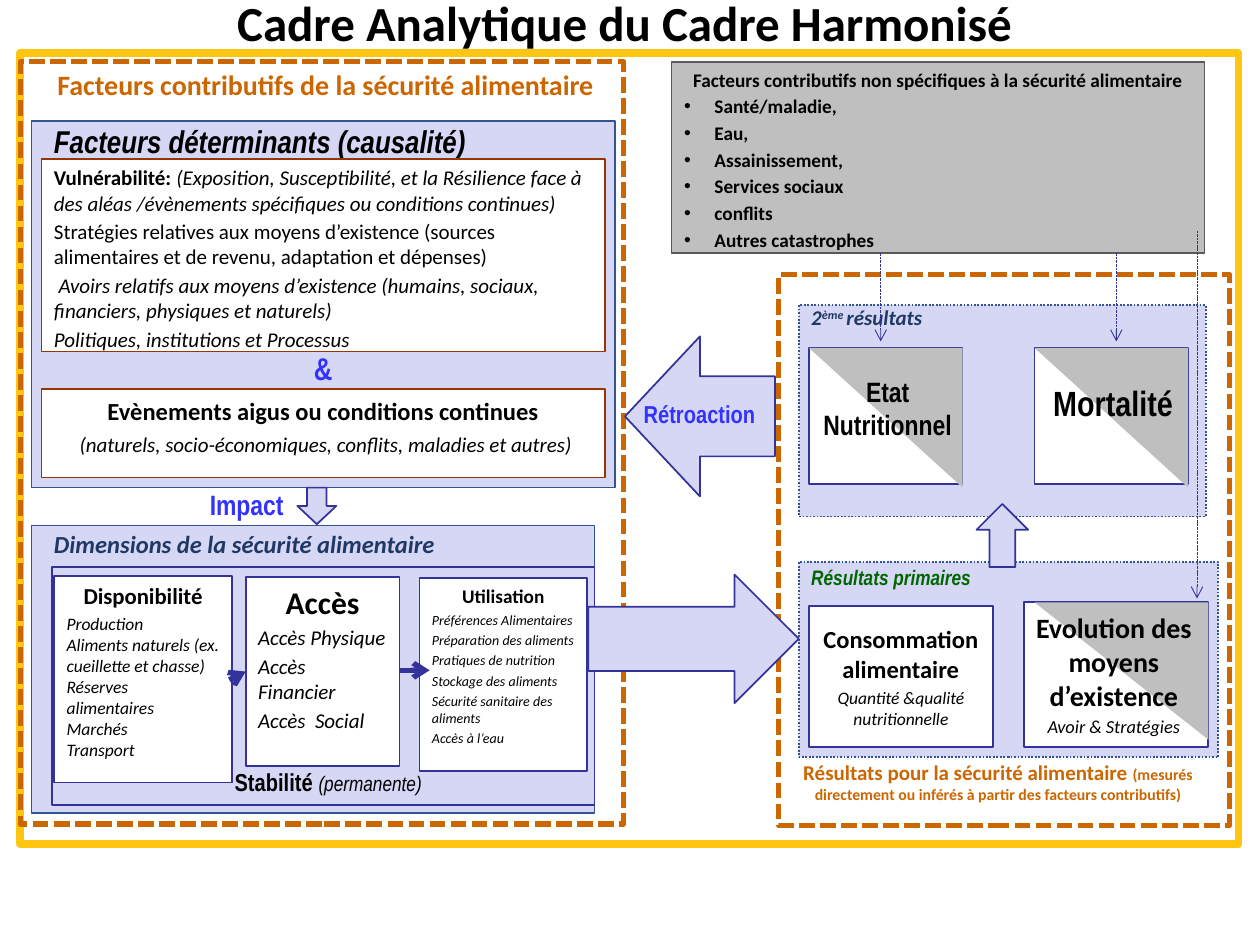
from collections import namedtuple

from lxml.etree import SubElement
from pptx import Presentation
from pptx.dml.color import RGBColor
from pptx.enum.dml import MSO_LINE as Dash
from pptx.enum.shapes import MSO_CONNECTOR as Connector, MSO_SHAPE as Preset
from pptx.enum.text import MSO_ANCHOR as Anchor, MSO_AUTO_SIZE as AutoSize, PP_ALIGN as Align
from pptx.oxml.ns import qn
from pptx.util import Inches, Pt

COLORS = {
    "black": "000000", "white": "FFFFFF", "gold": "FFC611", "orange": "CC6600",
    "lilac": "D6D6F5", "blue": "325491", "indigo": "333399", "bright": "3333FF",
    "navy": "203864", "brown": "993300", "green": "006600",
    "silver": "BFBFBF", "grey": "595959",
}
NARROW = "Arial Narrow"
Run = namedtuple("Run", "text size style", defaults=("",))
Para = namedtuple("Para", "runs align after bullet", defaults=(Align.LEFT, 2, False))


def lines(texts, size, style="", **layout):
    return [Para([Run(text, size, style)], **layout) for text in texts]


def centered(text, size, style="b", **layout):
    return Para([Run(text, size, style)], Align.CENTER, **layout)


class Board:
    def __init__(self, slide, font="Calibri"):
        self.slide = slide
        self.font = font

    def color(self, name):
        return RGBColor.from_string(COLORS[name])

    def place(self, shape, box):
        shape.left, shape.top, shape.width, shape.height = map(Inches, box)

    def paint(self, shape, fill=None, line=None, weight=1, dash=None):
        if fill:
            shape.fill.solid()
            shape.fill.fore_color.rgb = self.color(fill)
        else:
            shape.fill.background()
        if line:
            self.stroke(shape.line, line, weight, dash)
        else:
            shape.line.fill.background()

    def stroke(self, outline, color, weight, dash):
        outline.color.rgb = self.color(color)
        outline.width = Pt(weight)
        if dash:
            outline.dash_style = dash

    def fill_text(self, frame, paras, color="black", font=None, anchor=Anchor.TOP):
        frame.word_wrap = True
        frame.auto_size = AutoSize.NONE
        frame.vertical_anchor = anchor
        for index, para in enumerate(paras):
            target = frame.add_paragraph() if index else frame.paragraphs[0]
            target.alignment = para.align
            target.space_before, target.space_after = Pt(0), Pt(para.after)
            self.bullet(target, para.bullet)
            for part in para.runs:
                run = target.add_run()
                run.text = part.text
                run.font.name = font or self.font
                run.font.size = Pt(part.size)
                run.font.bold = "b" in part.style
                run.font.italic = "i" in part.style
                run.font.color.rgb = self.color(color)
                if "^" in part.style:
                    run.font._element.set("baseline", "30000")

    def bullet(self, paragraph, shown):
        props = paragraph._p.get_or_add_pPr()
        indent = Inches(0.24) if shown else 0
        props.set("marL", str(indent))
        props.set("indent", str(-indent))
        if shown:
            SubElement(props, qn("a:buFont"), typeface="Arial")
            SubElement(props, qn("a:buChar"), char="•")
        else:
            SubElement(props, qn("a:buNone"))

    def title(self, box, paras):
        heading = self.slide.shapes.title
        self.place(heading, box)
        self.fill_text(heading.text_frame, paras)

    def body(self, box, paras, **look):
        content = self.slide.placeholders[1]
        self.place(content, box)
        self.paint(content, **look)
        self.fill_text(content.text_frame, paras)

    def shape(self, preset, box, **look):
        item = self.slide.shapes.add_shape(preset, *map(Inches, box))
        item.shadow.inherit = False
        self.paint(item, **look)
        return item

    def panel(self, box, paras=(), anchor=Anchor.TOP, **look):
        item = self.shape(Preset.RECTANGLE, box, **look)
        self.fill_text(item.text_frame, paras, anchor=anchor)

    def block_arrow(self, preset, box):
        self.shape(preset, box, fill="lilac", line="indigo")

    def split_panel(self, box, corner):
        self.panel(box, fill="white", line="indigo")
        self.shape(Preset.RIGHT_TRIANGLE, corner, fill="silver").rotation = 180

    def label(self, box, paras, color="black", font=None):
        item = self.slide.shapes.add_textbox(*map(Inches, box))
        self.fill_text(item.text_frame, paras, color, font)

    def arrow(self, start, end, weight=0.5, dash=Dash.SQUARE_DOT):
        link = self.slide.shapes.add_connector(
            Connector.STRAIGHT, *map(Inches, start + end))
        self.stroke(link.line, "indigo", weight, dash)
        SubElement(link.line._get_or_add_ln(), qn("a:tailEnd"), type="arrow")
        SubElement(link._element.spPr, qn("a:effectLst"))


def draw_frames(board):
    board.title((0, -0.11, 10, 0.6), [centered("Cadre Analytique du Cadre Harmonisé ", 28, after=0)])
    board.body(
        (5.33, 0.49, 4.23, 1.52),
        [centered("Facteurs contributifs non spécifiques à la sécurité alimentaire", 11)]
        + lines(["Santé/maladie,", "Eau,", "Assainissement,", "Services sociaux",
                 "conflits", "Autres catastrophes"], 11, "b", bullet=True),
        fill="silver", line="grey")
    board.panel((0.16, 0.42, 9.67, 6.28), line="gold", weight=4.5)
    board.panel((0.25, 0.96, 4.63, 2.91), fill="lilac", line="blue")
    board.panel((0.25, 4.17, 4.47, 2.28), fill="lilac", line="blue")
    for box in ((0.16, 0.49, 4.79, 6.05), (6.18, 2.18, 3.58, 4.37)):
        board.panel(box, line="orange", weight=3, dash=Dash.SQUARE_DOT)


def draw_factors(board):
    board.label((0.25, 0.49, 4.67, 0.37),
                [centered("Facteurs contributifs de la sécurité alimentaire", 16)], "orange")
    board.label((0.33, 0.92, 4.04, 0.4),
                lines(["Facteurs déterminants (causalité)"], 18, "bi"), font=NARROW)
    board.panel((0.33, 1.26, 4.47, 1.53), [
        Para([Run("Vulnérabilité: ", 12, "b"),
              Run("(Exposition, Susceptibilité, et la Résilience face à des aléas "
                  "/évènements spécifiques ou conditions continues)", 12, "i")]),
        *lines(["Stratégies relatives aux moyens d’existence (sources alimentaires "
                "et de revenu, adaptation et dépenses)"], 12),
        *lines([" Avoirs relatifs aux moyens d’existence (humains, sociaux, "
                "financiers, physiques et naturels)",
                "Politiques, institutions et Processus"], 12, "i"),
    ], fill="white", line="brown")
    board.panel((0.33, 3.09, 4.47, 0.7), [
        centered("Evènements aigus ou conditions continues", 14),
        Para([Run(" ", 14, "b"),
              Run("(naturels, socio-économiques, conflits, maladies et autres)", 12, "i")],
             Align.CENTER),
    ], fill="white", line="brown")
    board.label((2.08, 2.72, 0.97, 0.42), [centered("&", 18)], "bright", NARROW)
    board.block_arrow(Preset.DOWN_ARROW, (2.36, 3.87, 0.31, 0.29))
    board.label((1.38, 3.82, 0.97, 0.37),
                lines(["Impact"], 16, "b", align=Align.RIGHT), "bright", NARROW)


def draw_dimensions(board):
    board.label((0.33, 4.15, 4.31, 0.34),
                lines(["Dimensions de la sécurité alimentaire"], 14, "bi"), "navy")
    board.panel((0.41, 4.5, 4.31, 1.89), line="indigo")
    dimensions = [
        ((0.43, 4.57, 1.41, 1.64), "Disponibilité", 13, 10, 0,
         ["Production", "Aliments naturels (ex. cueillette et chasse)",
          "Réserves alimentaires", "Marchés", "Transport"]),
        ((1.95, 4.58, 1.22, 1.5), "Accès", 18, 12, 2,
         ["Accès Physique", "Accès Financier", "Accès  Social"]),
        ((3.33, 4.59, 1.33, 1.53), "Utilisation", 11, 8, 2,
         ["Préférences Alimentaires", "Préparation des aliments",
          "Pratiques de nutrition", "Stockage des aliments",
          "Sécurité sanitaire des aliments", "Accès à l’eau"]),
    ]
    for box, name, name_size, size, after, aspects in dimensions:
        board.panel(box, [centered(name, name_size)] + lines(aspects, size, "i", after=after),
                    fill="white", line="indigo")
    board.label((1.06, 6.04, 3.09, 0.34),
                [Para([Run("Stabilité ", 14, "b"), Run("(permanente)", 12, "i")], Align.CENTER)],
                font=NARROW)
    board.arrow((1.83, 5.39), (1.95, 5.33), 3, None)
    board.arrow((3.17, 5.32), (3.41, 5.32), 3, None)


def draw_results(board):
    for box in ((6.34, 2.42, 3.23, 1.68), (6.34, 4.46, 3.33, 1.55)):
        board.panel(box, fill="lilac", line="blue", dash=Dash.ROUND_DOT)
    board.label((6.34, 2.37, 2.27, 0.3),
                [Para([Run("2", 12, "bi"), Run("ème ", 12, "bi^"), Run("résultats", 12, "bi")])],
                "navy")
    board.label((6.34, 4.43, 2.27, 0.3),
                lines(["Résultats primaires"], 12, "bi"), "green", NARROW)
    for left in (6.42, 8.21):
        board.split_panel((left, 2.76, 1.22, 1.08), (left, 2.76, 1.22, 1.11))
    board.label((6.42, 2.92, 1.25, 0.64), [centered("Etat Nutritionnel", 16, after=0)], font=NARROW)
    board.label((8.25, 2.98, 1.17, 0.44), [centered("Mortalité", 20)], font=NARROW)
    board.panel((6.42, 4.81, 1.46, 1.12),
                [centered("Consommation alimentaire", 14),
                 centered("Quantité &qualité nutritionnelle", 10, "i")],
                Anchor.MIDDLE, fill="white", line="indigo")
    board.split_panel((8.13, 4.78, 1.46, 1.15), (8.21, 4.78, 1.38, 1.09))
    board.label((8.05, 4.8, 1.58, 1.11),
                [centered("Evolution des moyens d’existence", 16),
                 centered("Avoir & Stratégies", 10.5, "i")])
    board.label((6.17, 5.98, 3.5, 0.47),
                [Para([Run("Résultats pour la sécurité alimentaire ", 12, "b"),
                       Run("(mesurés directement ou inférés à partir des facteurs contributifs)",
                           9, "b")], Align.CENTER)], "orange")


def draw_flows(board):
    board.block_arrow(Preset.LEFT_ARROW, (4.96, 2.67, 1.19, 1.27))
    board.label((5.01, 3.12, 1.24, 0.34), lines(["Rétroaction"], 14, "b"), "bright", NARROW)
    board.block_arrow(Preset.RIGHT_ARROW, (4.67, 4.56, 1.67, 1.02))
    board.block_arrow(Preset.UP_ARROW, (7.75, 4, 0.41, 0.5))
    for x, top, bottom in ((6.99, 2.01, 2.71), (8.86, 2.01, 2.71), (9.5, 1.83, 4.75)):
        board.arrow((x, top), (x, bottom))


def main():
    deck = Presentation()
    deck.slide_width, deck.slide_height = Inches(10), Inches(7.5)
    board = Board(deck.slides.add_slide(deck.slide_layouts[1]))
    for draw in (draw_frames, draw_factors, draw_dimensions, draw_results, draw_flows):
        draw(board)
    deck.save("out.pptx")


if __name__ == "__main__":
    main()
